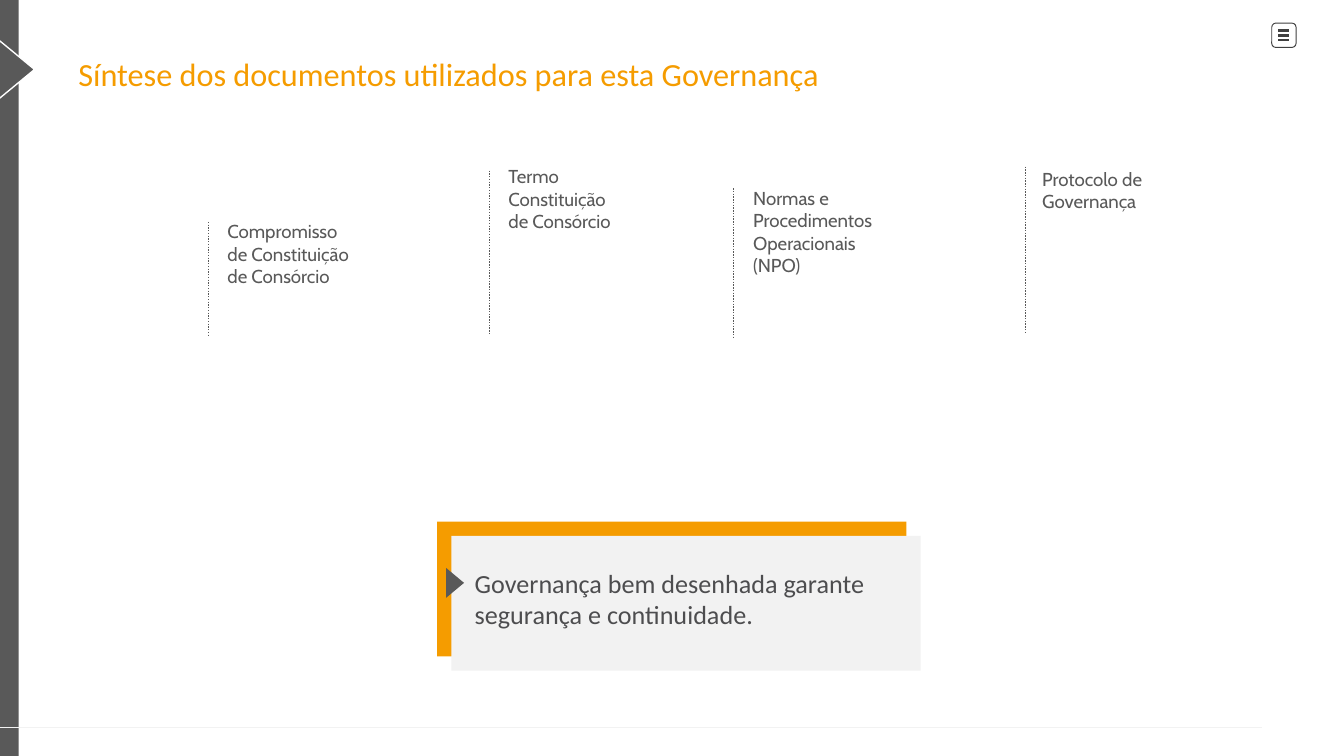
from dataclasses import dataclass

from lxml.etree import SubElement
from pptx import Presentation
from pptx.dml.color import RGBColor
from pptx.enum.dml import MSO_LINE
from pptx.enum.shapes import MSO_CONNECTOR, MSO_SHAPE
from pptx.enum.text import MSO_ANCHOR, MSO_AUTO_SIZE, PP_ALIGN
from pptx.oxml.ns import qn
from pptx.util import Pt


@dataclass(frozen=True)
class Theme:
    orange: str = "F59C00"
    gray: str = "595959"
    icon: str = "404040"
    light: str = "F2F2F2"
    white: str = "FFFFFF"
    callout_text: str = "4D4D4F"
    title_font: str = "Calibri"
    label_font: str = "Cabin"
    title_size: float = 17.3
    callout_size: float = 14
    label_size: float = 10


THEME = Theme()

# Content
TITLE = "Síntese dos documentos utilizados para esta Governança"
CALLOUT = "Governança bem desenhada garante segurança e continuidade."
# Each document: paragraphs, text box (left, top, width, height), rule (x, top, bottom)
DOCUMENTS = [
    (["Compromisso de Constituição de Consórcio"],
     (116.6, 115.2, 81.4, 41.8), (111.6, 118.8, 179.3)),
    (["Termo", "Constituição \vde Consórcio"],
     (267.1, 85.7, 84.2, 41.8), (262.1, 91.4, 178.6)),
    (["Normas e Procedimentos Operacionais \v(NPO)"],
     (398.2, 97.2, 109.4, 54), (393.1, 100.8, 181.4)),
    (["Protocolo de", "Governança"],
     (553, 87.1, 72.7, 29.5), (549.4, 89.3, 178.6)),
]


def points(*values):
    return [Pt(value) for value in values]


def add_block(shapes, kind, box, fill=None, line=None, weight=0.75, rotation=0):
    shape = shapes.add_shape(kind, *points(*box))
    shape.shadow.inherit = False
    shape.rotation = rotation
    if fill:
        shape.fill.solid()
        shape.fill.fore_color.rgb = RGBColor.from_string(fill)
    else:
        shape.fill.background()
    if line:
        shape.line.color.rgb = RGBColor.from_string(line)
        shape.line.width = Pt(weight)
    else:
        shape.line.fill.background()
    return shape


def add_rule(shapes, start, end, color, weight=0.75, dash=None):
    connector = shapes.add_connector(MSO_CONNECTOR.STRAIGHT, *points(*start, *end))
    connector.line.color.rgb = RGBColor.from_string(color)
    connector.line.width = Pt(weight)
    if dash:
        connector.line.dash_style = dash
    SubElement(connector._element.spPr, qn("a:effectLst"))


def write_text(shape, paragraphs, font, size, color, anchor=MSO_ANCHOR.TOP, spacing=1.0):
    frame = shape.text_frame
    frame.text = "\n".join(paragraphs)
    frame_format = {
        "word_wrap": True, "auto_size": MSO_AUTO_SIZE.NONE, "vertical_anchor": anchor,
        "margin_left": Pt(5.3), "margin_right": Pt(5.3),
        "margin_top": Pt(2.7), "margin_bottom": Pt(2.7),
    }
    for name, value in frame_format.items():
        setattr(frame, name, value)
    for paragraph in frame.paragraphs:
        paragraph.alignment = PP_ALIGN.LEFT
        paragraph.line_spacing = spacing
        paragraph.space_before = Pt(0)
        for run in paragraph.runs:
            for name, value in {"name": font, "size": Pt(size), "bold": False}.items():
                setattr(run.font, name, value)
            run.font.color.rgb = RGBColor.from_string(color)


def main():
    presentation = Presentation()
    presentation.slide_width, presentation.slide_height = points(720, 405)
    slide = presentation.slides.add_slide(presentation.slide_layouts[5])
    shapes = slide.shapes

    # Side bar and footer rule
    add_block(shapes, MSO_SHAPE.RECTANGLE, (0, 0, 10, 405), THEME.gray)
    add_rule(shapes, (676, 389.9), (0, 389.9), THEME.light)

    # Menu icon
    icon = shapes.add_group_shape().shapes
    add_block(icon, MSO_SHAPE.ROUNDED_RECTANGLE, (681.3, 12.4, 13, 13),
              line=THEME.icon, weight=0.5)
    for row in range(3):
        y = 16.4 + 2.6 * row
        add_rule(icon, (690.5, y), (684.7, y), THEME.icon, 1.25)

    # Title and its marker
    title = shapes.title
    title_box = points(36.7, 25.9, 584, 29.5)
    for name, value in zip(("left", "top", "width", "height"), title_box):
        setattr(title, name, value)
    write_text(title, [TITLE], THEME.title_font, THEME.title_size, THEME.orange,
               MSO_ANCHOR.MIDDLE, 0.9)
    add_block(shapes, MSO_SHAPE.ISOSCELES_TRIANGLE, (-13.9, 25, 40.3, 24.5),
              THEME.gray, THEME.white, rotation=90)

    # Documents with dotted rules
    for paragraphs, box, (x, top, bottom) in DOCUMENTS:
        add_rule(shapes, (x, top), (x, bottom), THEME.gray, dash=MSO_LINE.ROUND_DOT)
        label = shapes.add_textbox(*points(*box))
        write_text(label, paragraphs, THEME.label_font, THEME.label_size, THEME.gray)

    # Callout: two offset panels, text and marker
    callout = shapes.add_group_shape().shapes
    for offset, color in ((0, THEME.orange), (7.6, THEME.light)):
        add_block(callout, MSO_SHAPE.RECTANGLE,
                  (234.2 + offset, 279.5 + offset, 251.4, 72.2), color)
    message = callout.add_textbox(*points(249, 301, 242.6, 39.6))
    write_text(message, [CALLOUT], THEME.title_font, THEME.callout_size,
               THEME.callout_text)
    add_block(callout, MSO_SHAPE.ISOSCELES_TRIANGLE, (235.8, 307.5, 16, 9.6),
              THEME.gray, rotation=90)

    presentation.save("out.pptx")


if __name__ == "__main__":
    main()
